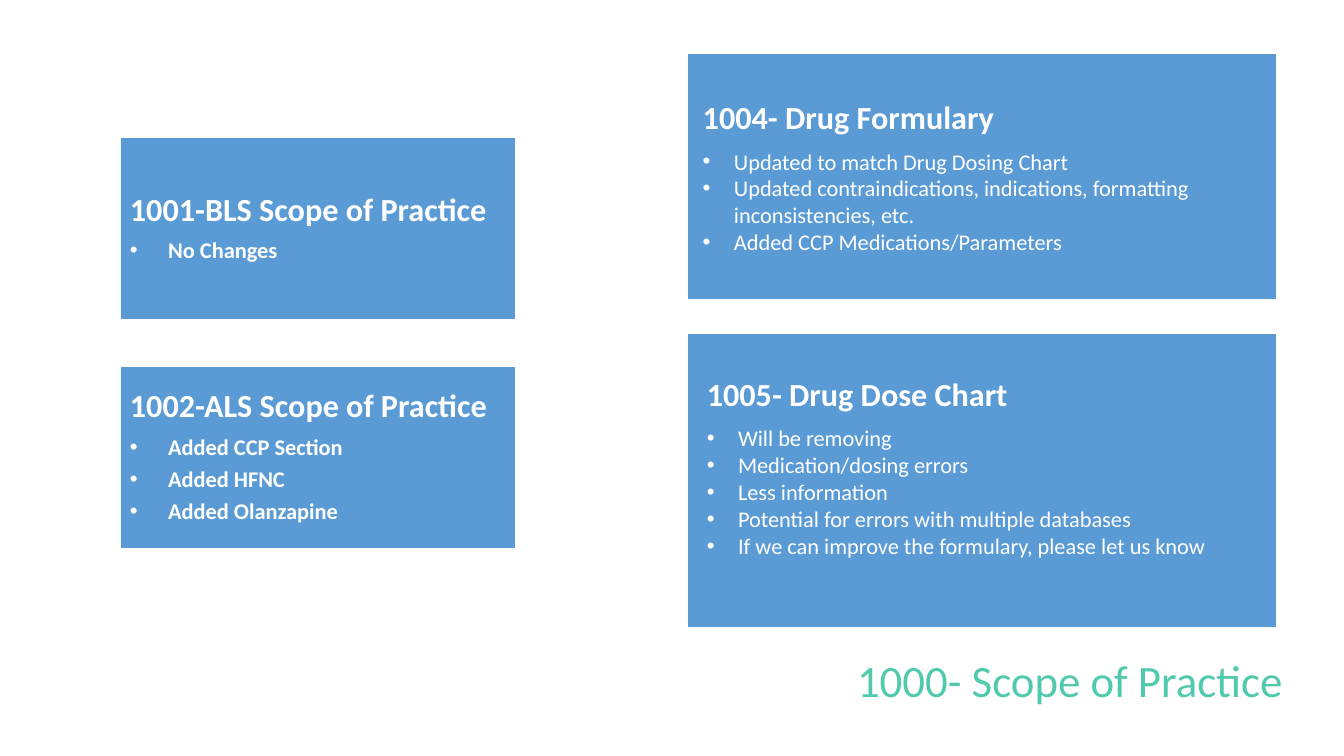
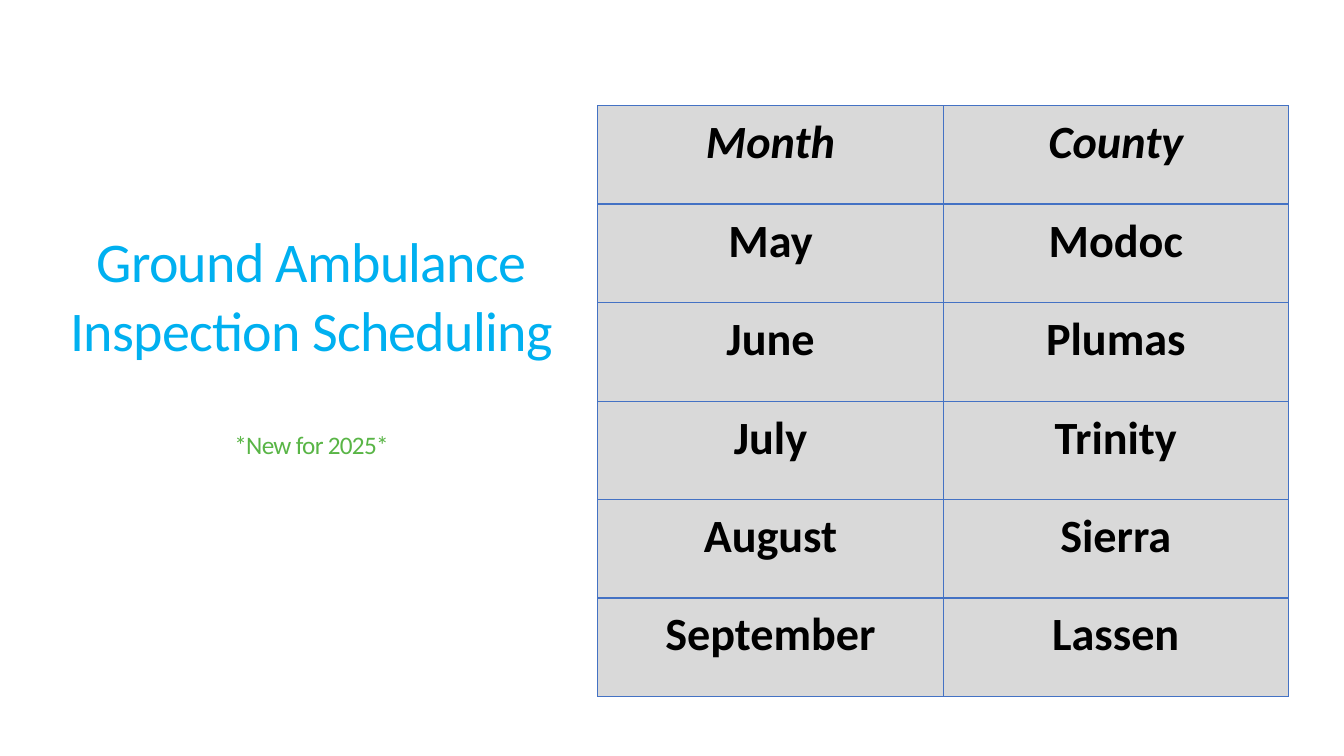
from dataclasses import dataclass

from lxml import etree
from pptx import Presentation
from pptx.dml.color import RGBColor
from pptx.enum.shapes import MSO_SHAPE
from pptx.enum.text import MSO_ANCHOR, MSO_AUTO_SIZE, PP_ALIGN
from pptx.oxml.ns import qn
from pptx.slide import Slide
from pptx.util import Inches, Pt

RECTANGLE = MSO_SHAPE.RECTANGLE
TOP, MIDDLE, BOTTOM = MSO_ANCHOR.TOP, MSO_ANCHOR.MIDDLE, MSO_ANCHOR.BOTTOM
LEFT, CENTER = PP_ALIGN.LEFT, PP_ALIGN.CENTER
NO_FIT = MSO_AUTO_SIZE.NONE
TITLE_ONLY = 5


@dataclass(frozen=True)
class Theme:
    font: str = "Calibri"
    white: str = "FFFFFF"
    black: str = "000000"
    panel: str = "5B9BD5"
    teal: str = "51C9AD"
    sky: str = "00B0F0"
    green: str = "59B546"
    cell: str = "D9D9D9"
    border: str = "4472C4"
    footer_size: int = 32
    title_size: int = 40
    note_size: int = 18
    heading_size: int = 23
    bullet_size: int = 16
    table_size: int = 33
    line_spacing: float = 0.9
    heading_gap: float = 8
    bullet_gap: float = 5.6


THEME = Theme()


@dataclass(frozen=True)
class Panel:
    left: float
    top: float
    width: float
    height: float
    heading: str
    bullets: tuple[str, ...]
    insets: tuple[float, float, float, float] = (0.1, 0.1, 0.1, 0.1)
    indent: float = 0.38
    bold: bool = True
    loose: bool = True


LEFT_COLUMN = (1.19, 3.92)
RIGHT_COLUMN = (6.82, 5.84)


def panel(column: tuple[float, float], top: float, height: float,
          heading: str, bullets: tuple[str, ...], **style) -> Panel:
    left, width = column
    return Panel(left, top, width, height, heading, bullets, **style)


PLAIN_LIST = {"indent": 0.31, "bold": False, "loose": False}
PANELS = (
    panel(LEFT_COLUMN, 1.36, 1.81, "1001-BLS Scope of Practice", ("No Changes",)),
    panel(LEFT_COLUMN, 3.63, 1.81, "1002-ALS Scope of Practice",
          ("Added CCP Section", "Added HFNC", "Added Olanzapine")),
    panel(RIGHT_COLUMN, 0.53, 2.44, "1004- Drug Formulary",
          ("Updated to match Drug Dosing Chart",
           "Updated contraindications, indications, formatting inconsistencies, etc.",
           "Added CCP Medications/Parameters"),
          insets=(0.15, 0.14, 0.14, 0.1), **PLAIN_LIST),
    panel(RIGHT_COLUMN, 3.31, 2.92, "1005- Drug Dose Chart",
          ("Will be removing", "Medication/dosing errors", "Less information",
           "Potential for errors with multiple databases",
           "If we can improve the formulary, please let us know"),
          insets=(0.19, 0.1, 0.28, 0.34), **PLAIN_LIST),
)

SCHEDULE = (
    ("Month", "County"),
    ("May", "Modoc"),
    ("June", "Plumas"),
    ("July", "Trinity"),
    ("August", "Sierra"),
    ("September", "Lassen"),
)


def rgb(color: str) -> RGBColor:
    return RGBColor.from_string(color)


def format_runs(p, size: int, color: str, bold: bool = False, italic: bool = False) -> None:
    for r in p.runs:
        r.font.name = THEME.font
        r.font.size = Pt(size)
        r.font.bold = bold
        r.font.italic = italic
        r.font.color.rgb = rgb(color)


def add_bullet(p, indent: float) -> None:
    p_pr = p._p.get_or_add_pPr()
    p_pr.set("marL", str(Inches(indent)))
    p_pr.set("indent", str(-Inches(indent)))
    etree.SubElement(p_pr, qn("a:buFont")).set("typeface", "Arial")
    etree.SubElement(p_pr, qn("a:buChar")).set("char", "•")


def add_panel(slide: Slide, item: Panel) -> None:
    sp = slide.shapes.add_shape(RECTANGLE, Inches(item.left), Inches(item.top),
                                Inches(item.width), Inches(item.height))
    sp.shadow.inherit = False
    sp.fill.solid()
    sp.fill.fore_color.rgb = rgb(THEME.panel)
    sp.line.color.rgb = rgb(THEME.white)
    sp.line.width = Pt(1)

    tf = sp.text_frame
    tf.word_wrap = True
    tf.vertical_anchor = MIDDLE
    tf.margin_left, tf.margin_top, tf.margin_right, tf.margin_bottom = map(Inches, item.insets)
    tf.text = "\n".join((item.heading, *item.bullets))
    heading, *bullets = tf.paragraphs
    heading.alignment = LEFT
    heading.line_spacing = THEME.line_spacing
    heading.space_after = Pt(THEME.heading_gap)
    format_runs(heading, THEME.heading_size, THEME.white, bold=True)
    for p in bullets:
        p.alignment = LEFT
        if item.loose:
            p.line_spacing = THEME.line_spacing
            p.space_after = Pt(THEME.bullet_gap)
        add_bullet(p, item.indent)
        format_runs(p, THEME.bullet_size, THEME.white, bold=item.bold)


def place_title(slide: Slide, left: float, top: float, width: float, height: float,
                text: str, anchor: MSO_ANCHOR):
    """Move and fill the title placeholder; return its text frame."""
    title = slide.shapes.title
    title.left, title.top = Inches(left), Inches(top)
    title.width, title.height = Inches(width), Inches(height)
    tf = title.text_frame
    tf.text = text
    tf.word_wrap = True
    tf.auto_size = NO_FIT
    tf.vertical_anchor = anchor
    return tf


def set_borders(cell, **widths: float) -> None:
    """Draw cell borders; keys are the sides L, R, T and B, in that order."""
    tc_pr = cell._tc.get_or_add_tcPr()
    for side, width in widths.items():
        ln = etree.SubElement(tc_pr, qn(f"a:ln{side}"), w=str(Pt(width)))
        fill = etree.SubElement(ln, qn("a:solidFill"))
        etree.SubElement(fill, qn("a:srgbClr"), val=THEME.border)


def add_schedule(slide: Slide) -> None:
    rows, cols = len(SCHEDULE), len(SCHEDULE[0])
    table = slide.shapes.add_table(rows, cols, Inches(5.93), Inches(1.05),
                                   Inches(6.85), Inches(5.86)).table
    for row, values in enumerate(SCHEDULE):
        for col, value in enumerate(values):
            cell = table.cell(row, col)
            set_borders(cell, L=1, R=1, T=2 if row == 1 else 1, B=2 if row == 0 else 1)
            cell.fill.solid()
            cell.fill.fore_color.rgb = rgb(THEME.cell)
            cell.margin_left = cell.margin_right = Inches(0.18)
            cell.margin_top = cell.margin_bottom = Inches(0.09)
            cell.vertical_anchor = TOP
            cell.text_frame.text = value
            p = cell.text_frame.paragraphs[0]
            p.alignment = CENTER
            format_runs(p, THEME.table_size, THEME.black, bold=True, italic=row == 0)


def build_scope_slide(slide: Slide) -> None:
    for item in PANELS:
        add_panel(slide, item)
    tf = place_title(slide, 8.4, 6.43, 4.93, 0.64, "1000- Scope of Practice", TOP)
    p = tf.paragraphs[0]
    p.alignment = LEFT
    format_runs(p, THEME.footer_size, THEME.teal)


def build_inspection_slide(slide: Slide) -> None:
    tf = place_title(slide, 0.55, 0.88, 5.08, 3.73,
                     "Ground Ambulance\nInspection Scheduling\n*New for 2025*", BOTTOM)
    *headline, note = tf.paragraphs
    for p in headline:
        p.space_after = Pt(6)
        format_runs(p, THEME.title_size, THEME.sky)
    note.space_before = Pt(43)
    format_runs(note, THEME.note_size, THEME.green)
    for p in tf.paragraphs:
        p.alignment = CENTER
        p.line_spacing = THEME.line_spacing
        for r in p.runs:
            r._r.get_or_add_rPr().set("spc", "-50")
    add_schedule(slide)


def main() -> None:
    prs = Presentation()
    prs.slide_width, prs.slide_height = Inches(13.33), Inches(7.5)
    for build in (build_scope_slide, build_inspection_slide):
        build(prs.slides.add_slide(prs.slide_layouts[TITLE_ONLY]))
    prs.save("out.pptx")


if __name__ == "__main__":
    main()
